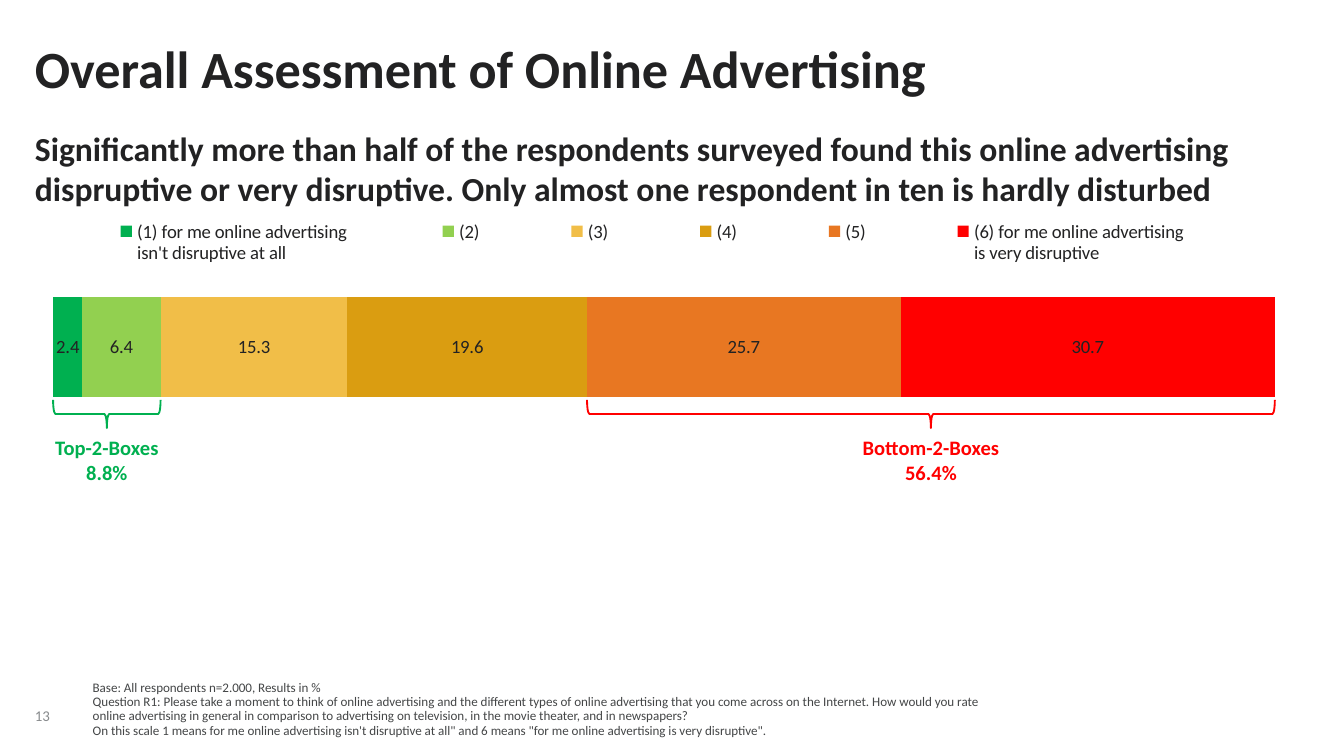
from dataclasses import dataclass

from lxml.etree import SubElement
from pptx import Presentation
from pptx.chart.data import CategoryChartData
from pptx.dml.color import RGBColor
from pptx.enum.chart import XL_CHART_TYPE as ChartType, XL_LEGEND_POSITION as LegendPosition
from pptx.enum.shapes import MSO_SHAPE as Preset
from pptx.enum.text import MSO_ANCHOR as Anchor, MSO_AUTO_SIZE as AutoSize, PP_ALIGN as Align
from pptx.oxml import parse_xml
from pptx.oxml.ns import nsdecls, qn
from pptx.util import Inches, Pt


@dataclass(frozen=True)
class Theme:
    """Font, colours and type sizes of the slide."""
    font: str = "Calibri"
    ink: str = "222223"
    note: str = "444647"
    muted: str = "888B8D"
    good: str = "00B050"
    bad: str = "FF0000"
    title: int = 28
    statement: int = 18
    callout: int = 11
    chart: int = 10
    number: int = 8
    footnote: int = 7


THEME = Theme()
COLUMNS, ROWS = 100, 56.25
CHART_BOX = (2.6, 13.3, 96.6, 20.2)
PLOT_PERCENT = (1.4, 30.8, 94.1, 62.3)
LEGEND_PERCENT = (0, 13.7, 95.4, 20)
RATINGS = [
    ("(1) for me online advertising \nisn't disruptive at all", 2.4, THEME.good),
    ("(2)", 6.4, "92D050"),
    ("(3)", 15.3, "F1BE48"),
    ("(4)", 19.6, "DA9D11"),
    ("(5)", 25.7, "E87722"),
    ("(6) for me online advertising \nis very disruptive", 30.7, THEME.bad),
]
FOOTNOTE = [
    "Base: All respondents n=2.000, Results in %",
    "Question R1: Please take a moment to think of online advertising and the different types of "
    "online advertising that you come across on the Internet. How would you rate online advertising "
    "in general in comparison to advertising on television, in the movie theater, and in newspapers?",
    "On this scale 1 means for me online advertising isn't disruptive at all\" and 6 means "
    "\"for me online advertising is very disruptive\".",
]


def grid(*cells):
    """Turn grid units into lengths."""
    return [Inches(cell / 10) for cell in cells]


def color(value):
    """Return a colour from its hex code."""
    return RGBColor.from_string(value)


def style_font(font, size, ink, bold=False):
    """Apply the theme font with a size and colour."""
    font.name, font.size, font.bold = THEME.font, Pt(size), bold
    font.color.rgb = color(ink)


def write(shape, lines, size, ink, bold=False, align=Align.LEFT, anchor=Anchor.TOP, wrap=True, spacing=1.0):
    """Write formatted paragraphs into a shape without insets."""
    frame = shape.text_frame
    frame.text = "\n".join(lines)
    frame.auto_size, frame.word_wrap, frame.vertical_anchor = AutoSize.NONE, wrap, anchor
    frame.margin_left = frame.margin_top = frame.margin_right = frame.margin_bottom = 0
    for paragraph in frame.paragraphs:
        paragraph.alignment, paragraph.line_spacing = align, spacing
        paragraph.space_before = Pt(0)
        for run in paragraph.runs:
            style_font(run.font, size, ink, bold)


def fill_placeholder(shape, box, text, size):
    """Move a placeholder and set its bold, unbulleted text."""
    shape.left, shape.top, shape.width, shape.height = grid(*box)
    write(shape, [text], size, THEME.ink, bold=True)
    for paragraph in shape.text_frame.paragraphs:
        properties = paragraph._p.get_or_add_pPr()
        properties.set("marL", "0")
        properties.set("indent", "0")
        properties.insert_element_before(
            parse_xml(f"<a:buNone {nsdecls('a')}/>"), "a:tabLst", "a:defRPr", "a:extLst")


def add_text(slide, box, lines, size, ink, **options):
    """Add a text box."""
    write(slide.shapes.add_textbox(*grid(*box)), lines, size, ink, **options)


def set_layout(element, index, percent, inner=False):
    """Give a chart part a manual layout in percent of the chart."""
    for old in element.findall(qn("c:layout")):
        element.remove(old)
    layout = parse_xml(f"<c:layout {nsdecls('c')}><c:manualLayout/></c:layout>")
    settings = [("layoutTarget", "inner")] if inner else []
    settings += [("xMode", "edge"), ("yMode", "edge")]
    settings += [(name, value / 100) for name, value in zip("xywh", percent)]
    for name, value in settings:
        SubElement(layout[0], qn(f"c:{name}")).set("val", str(value))
    element.insert(index, layout)


def add_rating_chart(slide):
    """Add the single stacked bar of all ratings."""
    data = CategoryChartData(number_format="0.0")
    data.categories = ["1"]
    for name, value, _ in RATINGS:
        data.add_series(name, [value])
    chart = slide.shapes.add_chart(ChartType.BAR_STACKED, *grid(*CHART_BOX), data).chart
    style_font(chart.font, THEME.chart, THEME.ink)
    chart.has_title = False
    chart.has_legend = True
    chart.legend.position = LegendPosition.TOP
    chart.legend.include_in_layout = False
    chart.value_axis.minimum_scale, chart.value_axis.maximum_scale = 0, 100
    chart.value_axis.has_major_gridlines = False
    chart.value_axis.visible = chart.category_axis.visible = False
    plot = chart.plots[0]
    plot.gap_width, plot.overlap, plot.vary_by_categories = 70, 100, False
    for series, (_, _, ink) in zip(plot.series, RATINGS):
        series.format.fill.solid()
        series.format.fill.fore_color.rgb = color(ink)
        labels = series.data_labels
        labels.show_value = True
        labels.number_format, labels.number_format_is_linked = "0.0", False
        style_font(labels.font, THEME.chart, THEME.ink)
    set_layout(chart._chartSpace.chart.plotArea, 0, PLOT_PERCENT, inner=True)
    set_layout(chart.legend._element, 1, LEGEND_PERCENT)


def add_bracket(slide, start, end, lines, ink):
    """Bracket a percentage range of the bar and label it underneath."""
    chart_left, _, chart_width, _ = CHART_BOX
    plot_left = chart_left + PLOT_PERCENT[0] / 100 * chart_width
    plot_width = PLOT_PERCENT[2] / 100 * chart_width
    span = (end - start) / 100 * plot_width
    middle = plot_left + (start + end) / 200 * plot_width
    depth, center = 2.1, 30.8
    box = grid(middle - depth / 2, center - span / 2, depth, span)
    brace = slide.shapes.add_shape(Preset.LEFT_BRACE, *box)
    brace.rotation = 270
    brace.shadow.inherit = False
    brace.fill.background()
    brace.line.color.rgb = color(ink)
    brace.line.width = Pt(1)
    label_width = 10.8
    add_text(slide, (middle - label_width / 2, 32.4, label_width, 3.7), lines,
             THEME.callout, ink, bold=True, align=Align.CENTER, wrap=False)


def main():
    """Build and save the slide."""
    presentation = Presentation()
    presentation.slide_width, presentation.slide_height = grid(COLUMNS, ROWS)
    slide = presentation.slides.add_slide(presentation.slide_layouts[1])
    title, statement = slide.placeholders
    fill_placeholder(title, (2.6, 2.7, 73.5, 5.5), "Overall Assessment of Online Advertising", THEME.title)
    fill_placeholder(
        statement, (2.6, 9.5, 92.4, 6.2),
        "Significantly more than half of the respondents surveyed found this online advertising "
        "dispruptive or very disruptive. Only almost one respondent in ten is hardly disturbed",
        THEME.statement)
    add_rating_chart(slide)
    values = [value for _, value, _ in RATINGS]
    add_bracket(slide, 0, sum(values[:2]), ["Top-2-Boxes", "8.8%"], THEME.good)
    add_bracket(slide, sum(values[:4]), 100, ["Bottom-2-Boxes", "56.4%"], THEME.bad)
    add_text(slide, (6.9, 50.7, 67, 4.2), FOOTNOTE, THEME.footnote, THEME.note,
             anchor=Anchor.BOTTOM, spacing=0.9)
    add_text(slide, (2.6, 51.3, 3.4, 2.6), ["13"], THEME.number, THEME.muted,
             anchor=Anchor.BOTTOM, wrap=False, spacing=0.85)
    presentation.save("out.pptx")


if __name__ == "__main__":
    main()
